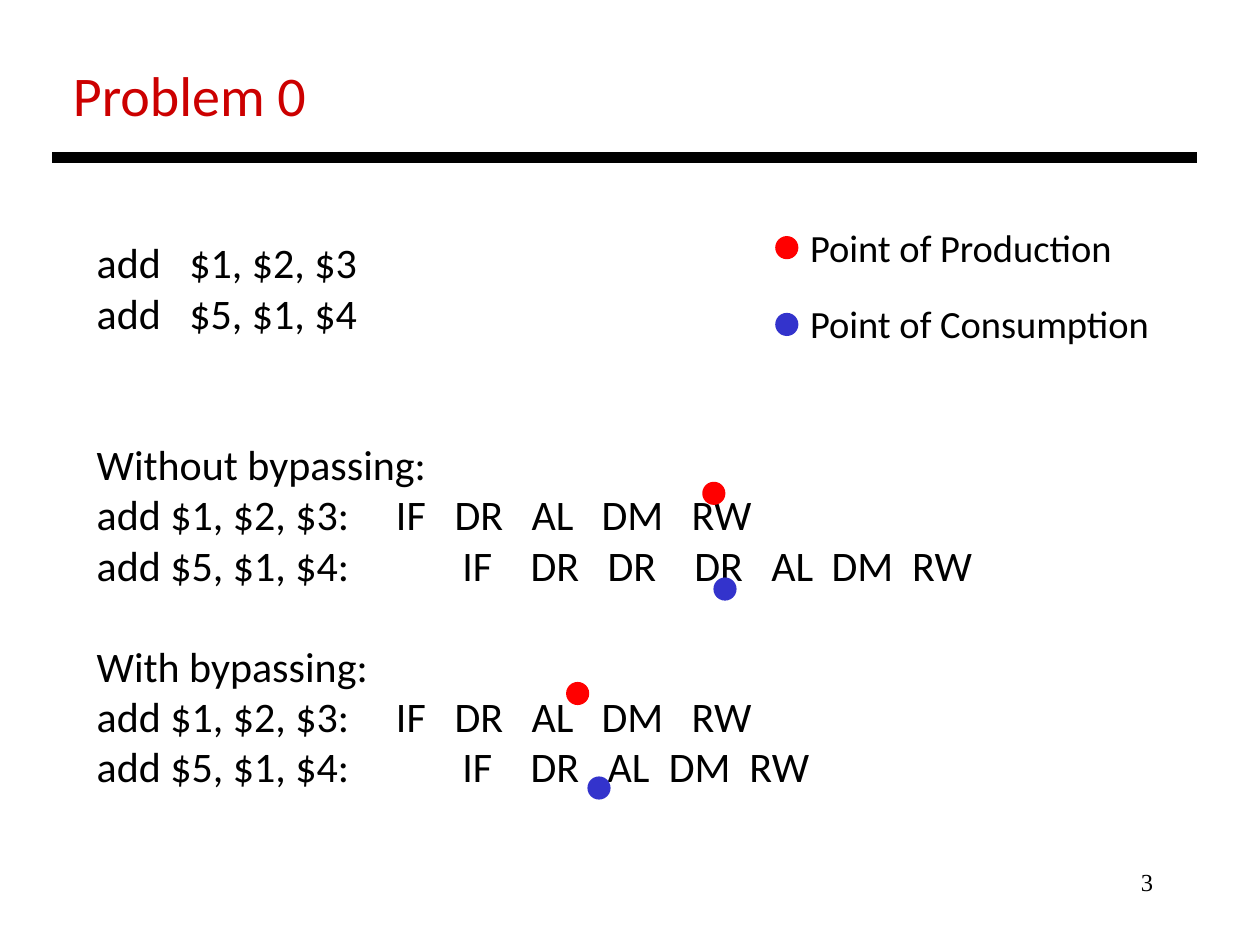
from lxml.etree import SubElement
from pptx import Presentation
from pptx.dml.color import RGBColor
from pptx.enum.shapes import MSO_CONNECTOR, MSO_SHAPE
from pptx.enum.text import PP_ALIGN
from pptx.oxml.ns import qn
from pptx.util import Pt

BLACK = "000000"
TITLE_RED = "CC0000"
PRODUCTION = "FF0000"
CONSUMPTION = "3333CC"
DOT_SIZE = 12.24
LINE_HEIGHT = 28.8

# Tab stops of the pipeline stages, from the left edge of the text
FIRST_STAGES = (171, 204.5, 248.5, 288.5, 340)
STALLED_STAGES = (209, 248, 292, 341.5, 385.5, 420, 466)
BYPASSED_STAGES = (209, 248, 292, 327, 373)

FIRST_ADD = "add $1, $2, $3:\tIF\tDR\tAL\tDM\tRW"

# Text, blank lines' worth of space before, tab stops
CODE_LINES = [
    ("add\t$1, $2, $3", 0, (53,)),
    ("add\t$5, $1, $4", 0, (53,)),
    ("Without bypassing:", 2, ()),
    (FIRST_ADD, 0, FIRST_STAGES),
    ("add $5, $1, $4:\tIF\tDR\tDR\tDR\tAL\tDM\tRW", 0, STALLED_STAGES),
    ("With bypassing:", 1, ()),
    (FIRST_ADD, 0, FIRST_STAGES),
    ("add $5, $1, $4:\tIF\tDR\tAL\tDM\tRW", 0, BYPASSED_STAGES),
]

# Label, colour, top of the dot, top of the text
LEGEND = [
    ("Point of Production", PRODUCTION, 135.4, 124.6),
    ("Point of Consumption", CONSUMPTION, 179.3, 167.8),
]

# Left, top, colour
STAGE_DOTS = [
    (324, 390.2, PRODUCTION),
    (401.8, 275.8, PRODUCTION),
    (408.2, 330.5, CONSUMPTION),
    (336.2, 444.2, CONSUMPTION),
]


def color(hex_string):
    return RGBColor.from_string(hex_string)


def add_text_box(slide, left, top, width, height, wrap=True):
    box = slide.shapes.add_textbox(Pt(left), Pt(top), Pt(width), Pt(height))
    box.text_frame.word_wrap = wrap
    return box.text_frame


def write_text(paragraph, text, size=24, font="Calibri", fill=BLACK, align=PP_ALIGN.LEFT):
    paragraph.alignment = align
    run = paragraph.add_run()
    run.text = text
    run.font.size = Pt(size)
    run.font.name = font
    run.font.color.rgb = color(fill)


def set_tab_stops(paragraph, positions):
    tab_list = SubElement(paragraph._p.get_or_add_pPr(), qn("a:tabLst"))
    for position in positions:
        SubElement(tab_list, qn("a:tab"), pos=str(int(Pt(position))), algn="l")


def add_dot(slide, left, top, fill):
    dot = slide.shapes.add_shape(
        MSO_SHAPE.OVAL, Pt(left), Pt(top), Pt(DOT_SIZE), Pt(DOT_SIZE))
    dot.shadow.inherit = False
    dot.fill.solid()
    dot.fill.fore_color.rgb = color(fill)
    dot.line.color.rgb = color(fill)
    dot.line.width = Pt(1)


def add_rule(slide, left, right, top, width):
    rule = slide.shapes.add_connector(
        MSO_CONNECTOR.STRAIGHT, Pt(left), Pt(top), Pt(right), Pt(top))
    rule.line.color.rgb = color(BLACK)
    rule.line.width = Pt(width)
    SubElement(rule._element.spPr, qn("a:effectLst"))


def add_code(slide):
    frame = add_text_box(slide, 48.2, 131.8, 518.4, 356.4)
    for index, (text, gap, tab_stops) in enumerate(CODE_LINES):
        paragraph = frame.add_paragraph() if index else frame.paragraphs[0]
        paragraph.line_spacing = Pt(LINE_HEIGHT)
        paragraph.space_before = Pt(gap * LINE_HEIGHT)
        if tab_stops:
            set_tab_stops(paragraph, tab_stops)
        write_text(paragraph, text)


def add_legend(slide):
    for label, fill, dot_top, text_top in LEGEND:
        add_dot(slide, 443.5, dot_top, fill)
        frame = add_text_box(slide, 455.8, text_top, 210, 33.8, wrap=False)
        write_text(frame.paragraphs[0], label, size=22)


def main():
    presentation = Presentation()
    presentation.slide_width = Pt(720)
    presentation.slide_height = Pt(540)
    slide = presentation.slides.add_slide(presentation.slide_layouts[6])

    # Page number
    number = add_text_box(slide, 516.2, 491.8, 149.8, 36)
    write_text(number.paragraphs[0], "3", size=14, font="Times New Roman",
               align=PP_ALIGN.RIGHT)

    # Title and rule
    title = add_text_box(slide, 34.6, 31, 149, 46, wrap=False)
    write_text(title.paragraphs[0], "Problem 0", size=32, fill=TITLE_RED)
    add_rule(slide, 30, 684, 90, 6)

    # Instructions, legend and marked stages
    add_code(slide)
    add_legend(slide)
    for left, top, fill in STAGE_DOTS:
        add_dot(slide, left, top, fill)

    presentation.save("out.pptx")


if __name__ == "__main__":
    main()
